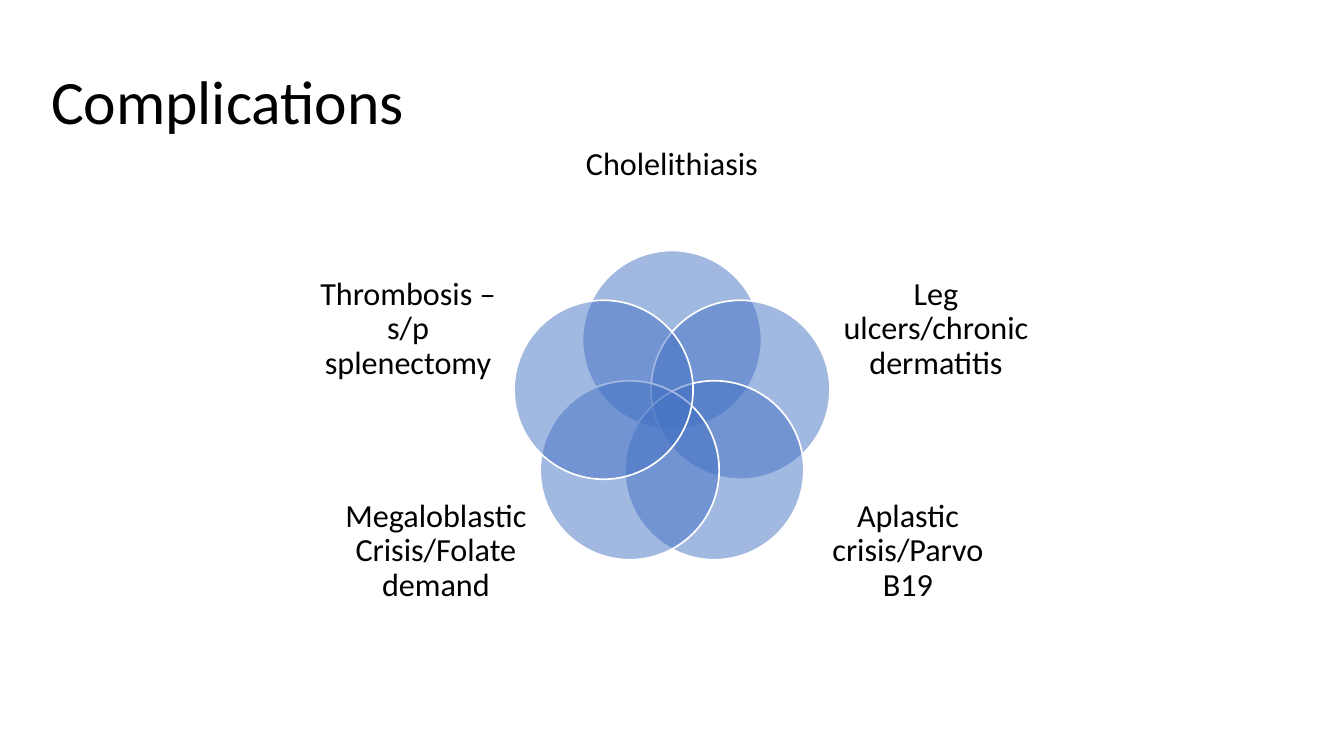
import math

from lxml import etree
from pptx import Presentation
from pptx.dml.color import RGBColor
from pptx.enum.shapes import MSO_SHAPE
from pptx.enum.text import MSO_ANCHOR, MSO_AUTO_SIZE, PP_ALIGN
from pptx.oxml.ns import qn
from pptx.util import Pt

EMU_PER_PX = 7495
SLIDE_WIDTH, SLIDE_HEIGHT = 1344, 756
TITLE_ONLY_LAYOUT = 5
OVAL = MSO_SHAPE.OVAL
MIDDLE = MSO_ANCHOR.MIDDLE
LEFT, CENTER = PP_ALIGN.LEFT, PP_ALIGN.CENTER
NO_AUTOFIT = MSO_AUTO_SIZE.NONE

FONT = "Calibri"
COLORS = {"text": "000000", "circle": "4472C4", "outline": "FFFFFF"}

VENN_X, VENN_Y = 672, 412
RING_RADIUS = 72
CIRCLE_DIAMETER = 179
# Clockwise from the top: text, label centre from the Venn axis, top, width, height
COMPLICATIONS = [
    ("Cholelithiasis", 0, 105, 207, 120),
    ("Leg ulcers/chronic dermatitis", 264, 264, 185, 131),
    ("Aplastic crisis/Parvo B19", 236, 486, 185, 131),
    ("Megaloblastic Crisis/Folate demand", -236, 486, 185, 131),
    ("Thrombosis – s/p splenectomy", -264, 264, 185, 131),
]


def px(length):
    return round(length * EMU_PER_PX)


def color(name):
    return RGBColor.from_string(COLORS[name])


def write_text(shape, text, size, alignment):
    frame = shape.text_frame
    frame.text = text
    frame.word_wrap = True
    frame.auto_size = NO_AUTOFIT
    frame.vertical_anchor = MIDDLE
    frame.margin_left = frame.margin_right = 0
    frame.margin_top = frame.margin_bottom = 0
    paragraph = frame.paragraphs[0]
    paragraph.alignment = alignment
    paragraph.line_spacing = 0.9
    font = paragraph.runs[0].font
    font.name = FONT
    font.size = Pt(size)
    font.color.rgb = color("text")


def add_title(slide, text):
    title = slide.shapes.title
    title.left, title.top = px(51), px(41)
    title.width, title.height = px(1210), px(127)
    write_text(title, text, 36.4, LEFT)


def add_circle(group, center_x, center_y):
    radius = CIRCLE_DIAMETER / 2
    circle = group.shapes.add_shape(
        OVAL, px(center_x - radius), px(center_y - radius),
        px(CIRCLE_DIAMETER), px(CIRCLE_DIAMETER))
    circle.shadow.inherit = False
    circle.fill.solid()
    circle.fill.fore_color.rgb = color("circle")
    fill_color = circle.fill._xPr.find(qn("a:solidFill"))[0]
    etree.SubElement(fill_color, qn("a:alpha")).set("val", "50000")
    circle.line.color.rgb = color("outline")
    circle.line.width = Pt(1)


def add_label(group, text, offset, top, width, height):
    label = group.shapes.add_textbox(
        px(VENN_X + offset - width / 2), px(top), px(width), px(height))
    write_text(label, text, 19, CENTER)


def add_venn(slide, items):
    group = slide.shapes.add_group_shape()
    for index, item in enumerate(items):
        angle = 2 * math.pi * index / len(items)
        add_circle(group, VENN_X + RING_RADIUS * math.sin(angle),
                   VENN_Y - RING_RADIUS * math.cos(angle))
        add_label(group, *item)


def main():
    presentation = Presentation()
    presentation.slide_width = px(SLIDE_WIDTH)
    presentation.slide_height = px(SLIDE_HEIGHT)
    layout = presentation.slide_layouts[TITLE_ONLY_LAYOUT]
    slide = presentation.slides.add_slide(layout)
    add_title(slide, "Complications")
    add_venn(slide, COMPLICATIONS)
    presentation.save("out.pptx")


if __name__ == "__main__":
    main()
